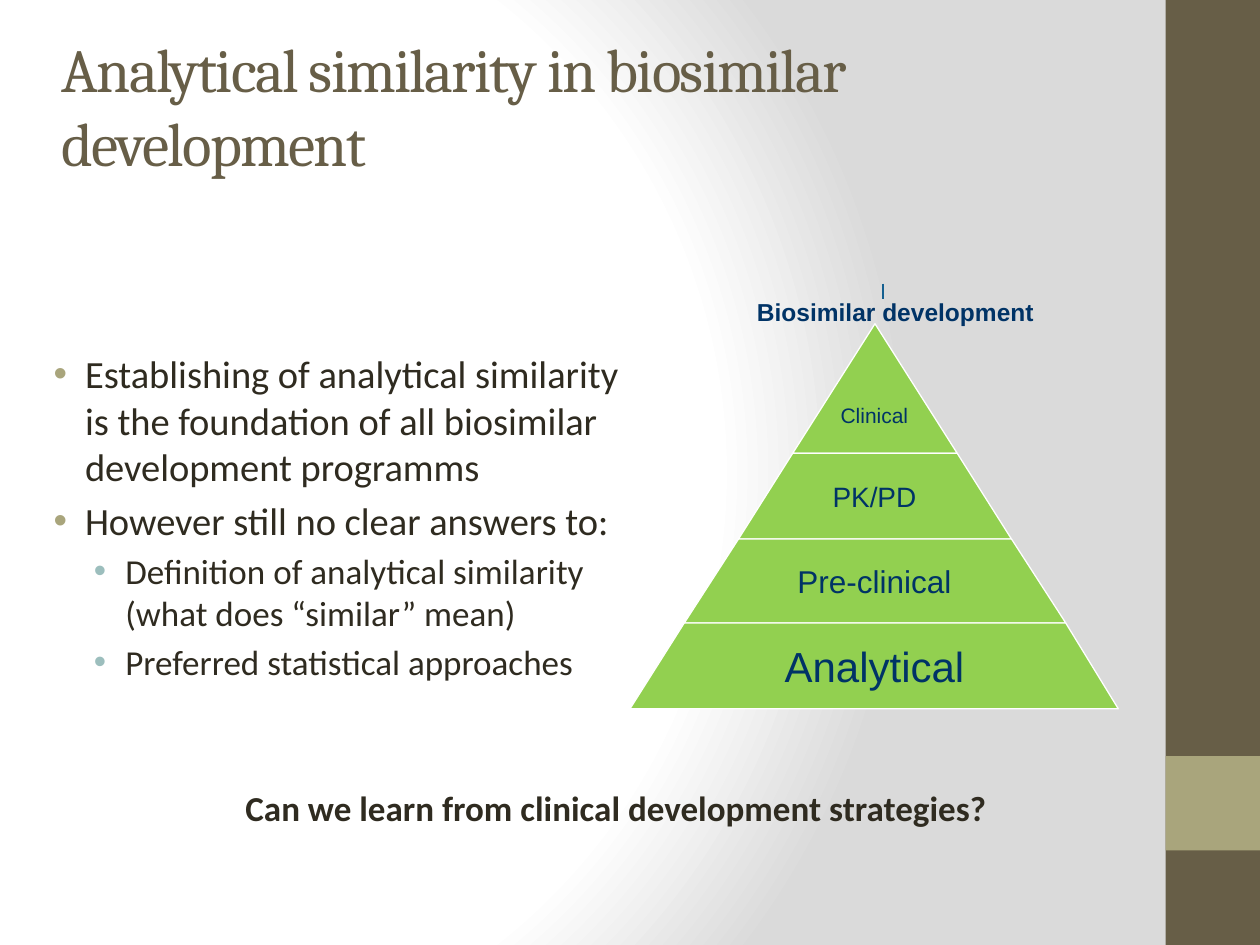
from pptx import Presentation
from pptx.dml.color import RGBColor
from pptx.enum.shapes import MSO_CONNECTOR, MSO_SHAPE
from pptx.enum.text import MSO_ANCHOR, MSO_AUTO_SIZE, PP_ALIGN
from pptx.oxml import parse_xml
from pptx.oxml.ns import nsdecls
from pptx.util import Pt
from lxml.etree import SubElement
from pptx.oxml.ns import qn

BROWN = RGBColor(0x67, 0x5E, 0x47)
KHAKI = RGBColor(0xA9, 0xA5, 0x7C)
TEAL = RGBColor(0x9C, 0xBE, 0xBD)
INK = RGBColor(0x2F, 0x2B, 0x20)
GREEN = RGBColor(0x92, 0xD0, 0x50)
NAVY = RGBColor(0x00, 0x33, 0x66)
BLUE = RGBColor(0x15, 0x60, 0x90)
WHITE = RGBColor(0xFF, 0xFF, 0xFF)
GREY = RGBColor(0xDA, 0xDA, 0xDA)

# Level, text
POINTS = [
    (0, "Establishing of analytical similarity is the foundation of all "
        "biosimilar development programms"),
    (0, "However still no clear answers to:"),
    (1, "Definition of analytical similarity (what does “similar” mean)"),
    (1, "Preferred statistical approaches"),
]
# Size, indent, bullet colour of each list level
LEVELS = [(22, 27, KHAKI), (20, 50, TEAL)]
# Label, text size, height of each tier from the top
TIERS = [("Clinical", 12, 74.2), ("PK/PD", 16, 48.5),
         ("Pre-clinical", 18, 48.5), ("Analytical", 24, 48.5)]


def place(shape, box):
    shape.left, shape.top, shape.width, shape.height = map(Pt, box)


def add_run(para, text, font, size, color, bold=False):
    run = para.add_run()
    run.text = text
    run.font.name = font
    run.font.size = Pt(size)
    run.font.bold = bold
    run.font.color.rgb = color
    return run


def add_label(slide, box, text, size, bold=False, anchor=MSO_ANCHOR.MIDDLE):
    frame = slide.shapes.add_textbox(*map(Pt, box)).text_frame
    frame.margin_left = frame.margin_right = 0
    frame.margin_top = frame.margin_bottom = 0
    frame.word_wrap = True
    frame.vertical_anchor = anchor
    para = frame.paragraphs[0]
    para.alignment = PP_ALIGN.CENTER
    add_run(para, text, "Arial", size, NAVY, bold)


def add_back(slide):
    stops = "".join(
        f'<a:gs pos="{pos}000"><a:srgbClr val="{color}"/></a:gs>'
        for pos, color in [(0, WHITE), (75, WHITE), (100, GREY)])
    back = parse_xml(
        f'<p:bg {nsdecls("p", "a")}><p:bgPr><a:gradFill rotWithShape="1">'
        f'<a:gsLst>{stops}</a:gsLst><a:path path="circle">'
        '<a:fillToRect l="20000" t="50000" r="100000" b="50000"/></a:path>'
        '</a:gradFill><a:effectLst/></p:bgPr></p:bg>')
    slide.element.cSld.insert(0, back)


def add_side(slide, box):
    left, top, width, height = box
    square = (left, top + 0.8 * height, width, width)
    for part, color in [(box, BROWN), (square, KHAKI)]:
        shape = slide.shapes.add_shape(MSO_SHAPE.RECTANGLE, *map(Pt, part))
        shape.shadow.inherit = False
        shape.fill.solid()
        shape.fill.fore_color.rgb = color
        shape.line.fill.background()


def add_title(slide, box):
    title = slide.shapes.title
    place(title, box)
    frame = title.text_frame
    frame.auto_size = MSO_AUTO_SIZE.NONE
    frame.vertical_anchor = MSO_ANCHOR.MIDDLE
    para = frame.paragraphs[0]
    para.alignment = PP_ALIGN.LEFT
    run = add_run(para, "Analytical similarity in biosimilar development",
                  "Cambria", 35, BROWN)
    run.font._element.set("spc", "-100")


def add_list(slide, box):
    body = slide.placeholders[1]
    place(body, box)
    frame = body.text_frame
    frame.auto_size = MSO_AUTO_SIZE.NONE
    for i, (level, text) in enumerate(POINTS):
        para = frame.add_paragraph() if i else frame.paragraphs[0]
        size, indent, color = LEVELS[level]
        para.level = level
        props = para._p.get_or_add_pPr()
        props.set("marL", str(Pt(indent)))
        props.set("indent", str(Pt(-18)))
        tint = SubElement(props, qn("a:buClr"))
        SubElement(tint, qn("a:srgbClr")).set("val", str(color))
        SubElement(props, qn("a:buFont")).set("typeface", "Arial")
        SubElement(props, qn("a:buChar")).set("char", "•")
        add_run(para, text, "Calibri", size, INK)


def add_tiers(slide, box):
    left, top, width, height = box
    mid = left + width / 2
    y = top
    for i, (text, size, step) in enumerate(TIERS):
        low = y + step
        # Half widths grow evenly from the apex to the base
        near, far = [width / 2 * (edge - top) / height for edge in (y, low)]
        points = [(mid + far, low), (mid - far, low), (mid - near, y)]
        if near:
            points.append((mid + near, y))
        build = slide.shapes.build_freeform(*points[0], scale=Pt(1))
        build.add_line_segments(points[1:], close=True)
        tier = build.convert_to_shape()
        tier.shadow.inherit = False
        tier.fill.solid()
        tier.fill.fore_color.rgb = GREEN
        tier.line.color.rgb = WHITE
        tier.line.width = Pt(0.75)
        # The label of the pointed tier sits lower, where there is room
        center = (y + low) / 2 if i else low - 22
        add_label(slide, (mid - 100, center - 8, 200, 16), text, size)
        y = low

    # Heading and tick above the apex
    add_label(slide, (mid - 73, top - 16, 170, 17.5),
              "Biosimilar development", 14, True, MSO_ANCHOR.BOTTOM)
    x = mid + 5
    tick = slide.shapes.add_connector(
        MSO_CONNECTOR.STRAIGHT, Pt(x), Pt(top - 23), Pt(x), Pt(top - 14.4))
    tick.line.color.rgb = BLUE
    tick.line.width = Pt(1)
    SubElement(tick._element.spPr, qn("a:effectLst"))


def add_ask(slide, box):
    frame = slide.shapes.add_textbox(*map(Pt, box)).text_frame
    frame.word_wrap = False
    add_run(frame.paragraphs[0],
            "Can we learn from clinical development strategies?",
            "Calibri", 20, INK, True)


def main():
    deck = Presentation()
    deck.slide_width, deck.slide_height = Pt(720), Pt(540)
    slide = deck.slides.add_slide(deck.slide_layouts[1])
    add_back(slide)
    add_side(slide, (666, 0, 54, 540))
    add_title(slide, (28, 15, 600, 90))
    add_list(slide, (14.4, 196.6, 363, 211.7))
    add_tiers(slide, (360, 185, 279.4, sum(tier[2] for tier in TIERS)))
    add_ask(slide, (133.2, 445.7, 441.4, 53.3))
    deck.save("out.pptx")


if __name__ == "__main__":
    main()
